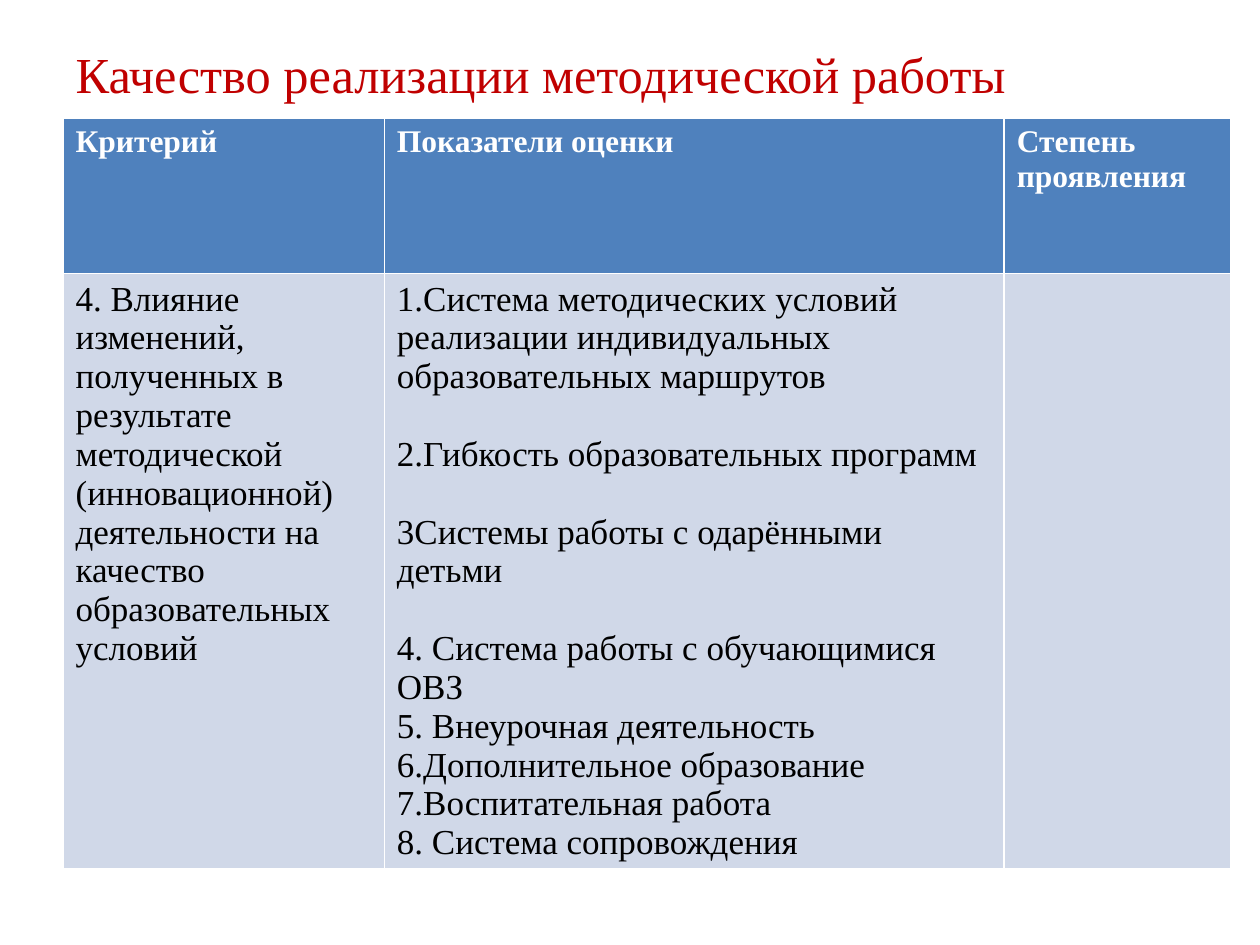
from pptx import Presentation
from pptx.dml.color import RGBColor
from pptx.enum import text as t
from pptx.util import Pt

FONT = "Times New Roman"
COLORS = {"title": "C00000", "head": "4F81BD", "body": "D0D8E8",
          "white": "FFFFFF", "black": "000000"}
COLS = [183.6, 354.24, 129.6]
ROWS = [88.56, 340]
GAP = 22.2  # one line of body text

HEADS = ["Критерий", "Показатели оценки", "Степень проявления"]
FACTOR = ("4. Влияние изменений, полученных в результате методической "
          "(инновационной) деятельности на качество образовательных условий")
# Each item with the space after it
ITEMS = [
    ("1.Система методических условий реализации индивидуальных "
     "образовательных маршрутов", GAP),
    ("2.Гибкость образовательных программ", GAP),
    ("3Системы работы с одарёнными детьми", GAP),
    ("4. Система работы с обучающимися ОВЗ", 0),
    ("5. Внеурочная деятельность", 0),
    ("6.Дополнительное образование", 0),
    ("7.Воспитательная работа", 0),
    ("8. Система сопровождения", 0),
]


def color(name):
    return RGBColor.from_string(COLORS[name])


def add_run(para, words, size, ink, bold=False):
    run = para.add_run()
    run.text = words
    font = run.font
    font.name, font.size, font.bold = FONT, Pt(size), bold
    font.color.rgb = color(ink)


def add_title(slide, words):
    title = slide.shapes.title
    title.left, title.top = Pt(36), Pt(21.6)
    title.width, title.height = Pt(648), Pt(40.32)
    frame = title.text_frame
    frame.auto_size = t.MSO_AUTO_SIZE.NONE
    frame.vertical_anchor = t.MSO_ANCHOR.MIDDLE
    para = frame.paragraphs[0]
    para.alignment = t.PP_ALIGN.JUSTIFY
    add_run(para, words, 28.8, "title")


def fill_cell(cell, fill, items, size, ink, bold=False):
    cell.fill.solid()
    cell.fill.fore_color.rgb = color(fill)
    frame = cell.text_frame
    for i, (words, gap) in enumerate(items):
        para = frame.add_paragraph() if i else frame.paragraphs[0]
        para.space_after = Pt(gap)
        add_run(para, words, size, ink, bold)


def add_grid(slide):
    table = slide.shapes.add_table(
        len(ROWS), len(COLS), Pt(36), Pt(67.68),
        Pt(sum(COLS)), Pt(sum(ROWS))).table
    for col, width in zip(table.columns, COLS):
        col.width = Pt(width)
    for row, height in zip(table.rows, ROWS):
        row.height = Pt(height)
    # Header row
    for i, head in enumerate(HEADS):
        fill_cell(table.cell(0, i), "head", [(head, 0)], 18, "white", True)
    # Body row, the last cell left free for the mark
    for i, items in enumerate([[(FACTOR, 0)], ITEMS, []]):
        fill_cell(table.cell(1, i), "body", items, 20, "black")


def main():
    deck = Presentation()
    deck.slide_width, deck.slide_height = Pt(720), Pt(540)
    slide = deck.slides.add_slide(deck.slide_layouts[5])
    add_title(slide, "Качество реализации методической работы")
    add_grid(slide)
    deck.save("out.pptx")


if __name__ == "__main__":
    main()
